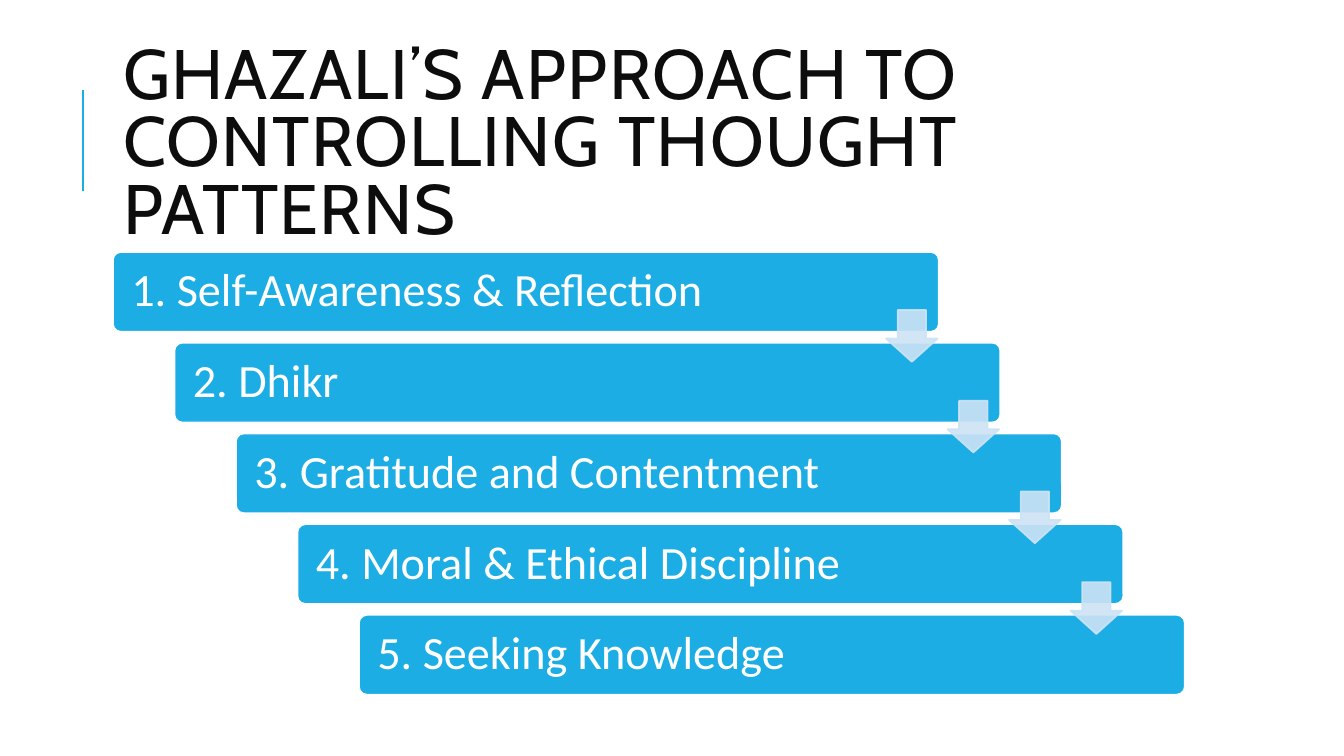
"""Build a slide with five descending steps joined by arrows."""
from dataclasses import dataclass

from lxml import etree
from pptx import Presentation
from pptx import util as u
from pptx.dml.color import RGBColor
from pptx.enum import shapes, text
from pptx.oxml.ns import qn

HUES = {"step": "1CADE4", "arrow": "CDE3F5", "ink": "0D0D0D", "white": "FFFFFF"}
COL, ROW = 0.61, 0.9
LEFT, TOP = 1.12, 2.5
STEPS = (
    "1. Self-Awareness & Reflection",
    "2. Dhikr",
    "3. Gratitude and Contentment",
    "4. Moral & Ethical Discipline",
    "5. Seeking Knowledge",
)


@dataclass(frozen=True)
class Cell:
    """A box measured in grid columns and rows."""
    col: float
    row: float
    wide: float
    high: float

    def shift(self, n: int) -> "Cell":
        """Return the cell moved n steps down the stair."""
        return Cell(self.col + n, self.row + n, self.wide, self.high)

    def box(self) -> tuple:
        """Return left, top, width and height as lengths."""
        return tuple(u.Inches(x) for x in (
            LEFT + self.col * COL, TOP + self.row * ROW,
            self.wide * COL, self.high * ROW))


@dataclass(frozen=True)
class Look:
    """The form and colours of a repeated shape."""
    kind: shapes.MSO_SHAPE
    adj: tuple
    fill: str
    line: str
    alpha: int = 100


TITLE = Cell(0, -2.07, 17.43, 1.82)
RULE = Cell(-0.48, -1.78, 0, 1.11)
BAR = Cell(0, 0, 13.43, 0.88)
ARROW = Cell(12.57, 0.64, 0.84, 0.57)
STEP = Look(shapes.MSO_SHAPE.ROUNDED_RECTANGLE, (0.1,), "step", "white")
POINT = Look(shapes.MSO_SHAPE.DOWN_ARROW, (0.55, 0.45), "arrow", "arrow", 90)


def tint(name: str) -> RGBColor:
    """Return a named colour."""
    return RGBColor.from_string(HUES[name])


def assign(item, form: dict) -> None:
    """Set each attribute of an item from a dict."""
    for key, val in form.items():
        setattr(item, key, val)


def write(shape, words: str, face: str, size: int, hue: str, lead: float, pad: dict):
    """Put one left-aligned line of words in a shape and return its run."""
    frame = shape.text_frame
    assign(frame, {"word_wrap": True, "auto_size": text.MSO_AUTO_SIZE.NONE,
                   "vertical_anchor": text.MSO_ANCHOR.MIDDLE, **pad})
    para = frame.paragraphs[0]
    assign(para, {"alignment": text.PP_ALIGN.LEFT, "line_spacing": lead})
    run = para.add_run()
    run.text = words
    assign(run.font, {"name": face, "size": u.Pt(size)})
    run.font.color.rgb = tint(hue)
    return run


def draw(slide, cell: Cell, look: Look):
    """Add one shape with the given look."""
    shape = slide.shapes.add_shape(look.kind, *cell.box())
    shape.shadow.inherit = False
    for i, val in enumerate(look.adj):
        shape.adjustments[i] = val
    shape.fill.solid()
    shape.fill.fore_color.rgb = tint(look.fill)
    shape.line.color.rgb = tint(look.line)
    shape.line.width = u.Pt(1.25)
    if look.alpha < 100:
        for node in shape.element.spPr.iter(qn("a:srgbClr")):
            etree.SubElement(node, qn("a:alpha"), val=str(look.alpha * 1000))
    return shape


def rule(slide, cell: Cell) -> None:
    """Add the upright line beside the title."""
    x, y, wide, high = cell.box()
    line = slide.shapes.add_connector(
        shapes.MSO_CONNECTOR.STRAIGHT, x, y + high, x + wide, y)
    line.line.color.rgb = tint("step")
    line.line.width = u.Pt(1.5)
    etree.SubElement(line.element.spPr, qn("a:effectLst"))


def main() -> None:
    """Build and save the slide."""
    deck = Presentation()
    assign(deck, {"slide_width": u.Inches(13.33), "slide_height": u.Inches(7.5)})
    slide = deck.slides.add_slide(deck.slide_layouts[5])
    head = slide.shapes.title
    assign(head, dict(zip(("left", "top", "width", "height"), TITLE.box())))
    run = write(head, "GHAZALI’S APPROACH TO CONTROLLING THOUGHT PATTERNS",
                "Cabin", 50, "ink", 0.8, {})
    run.font._element.set("spc", "100")
    rule(slide, RULE)
    pad = {"margin_left": u.Inches(0.16), "margin_right": u.Inches(0.16)}
    for n, words in enumerate(STEPS):
        bar = draw(slide, BAR.shift(n), STEP)
        write(bar, words, "Calibri", 33, "white", 0.9, pad)
    for n in range(len(STEPS) - 1):
        draw(slide, ARROW.shift(n), POINT)
    deck.save("out.pptx")


if __name__ == "__main__":
    main()
